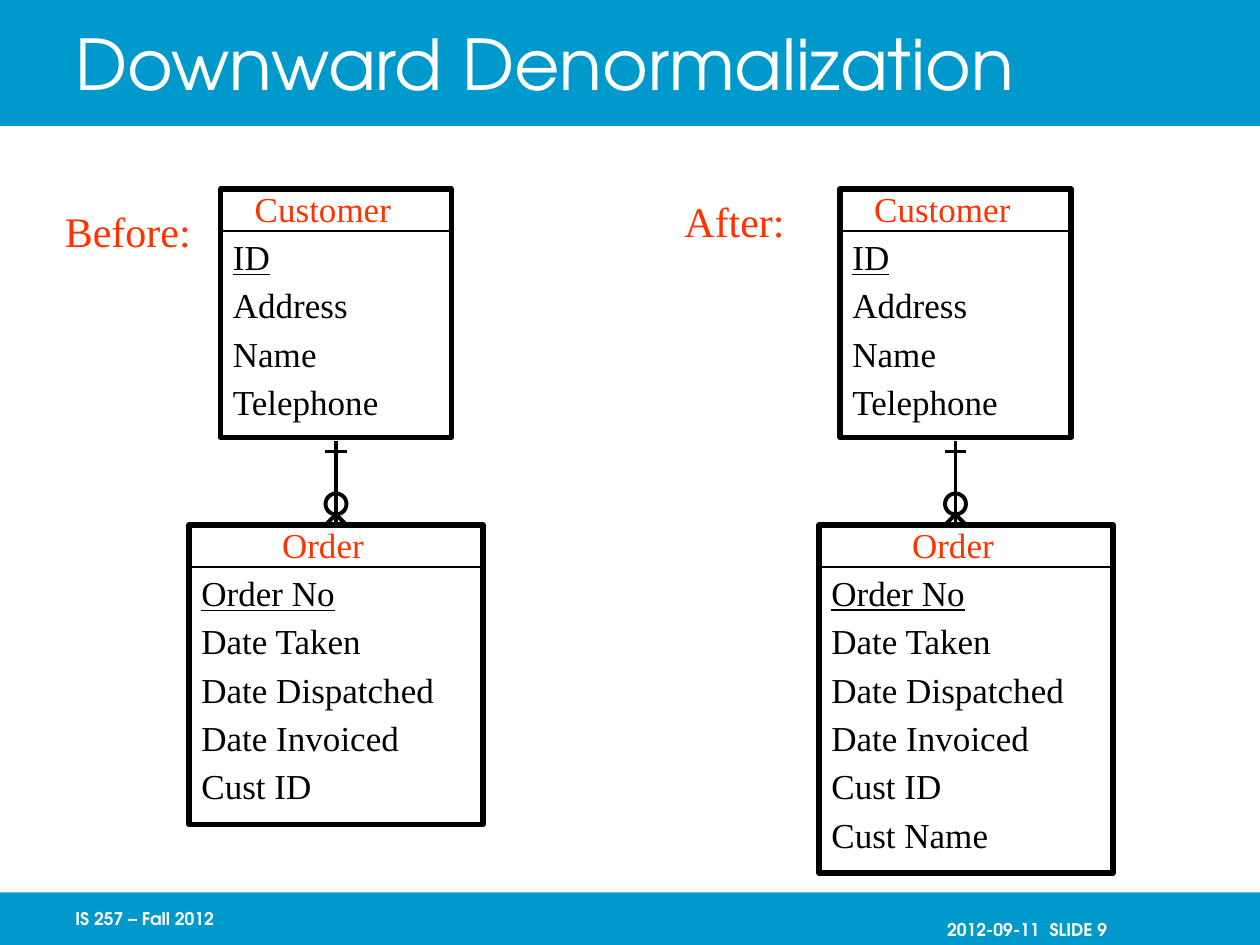
from lxml import etree
from pptx import Presentation
from pptx.dml.color import RGBColor
from pptx.enum.shapes import MSO_CONNECTOR, MSO_SHAPE
from pptx.enum.text import MSO_ANCHOR, PP_ALIGN
from pptx.oxml.ns import qn
from pptx.util import Pt

RECTANGLE, OVAL = MSO_SHAPE.RECTANGLE, MSO_SHAPE.OVAL
STRAIGHT = MSO_CONNECTOR.STRAIGHT
TOP, MIDDLE = MSO_ANCHOR.TOP, MSO_ANCHOR.MIDDLE
LEFT, CENTER, RIGHT = PP_ALIGN.LEFT, PP_ALIGN.CENTER, PP_ALIGN.RIGHT

BLUE = RGBColor(0x00, 0x99, 0xCC)
WHITE = RGBColor(0xFF, 0xFF, 0xFF)
BLACK = RGBColor(0x00, 0x00, 0x00)
RED = RGBColor(0xFF, 0x33, 0x00)

SANS, SERIF = "TeX Gyre Adventor", "Times New Roman"

PAGE_WIDTH, PAGE_HEIGHT = 720, 540
CUSTOMER_TOP, CUSTOMER_WIDTH, CUSTOMER_HEIGHT = 108, 132, 142
ORDER_TOP, ORDER_WIDTH = 300, 168
HEADING_HEIGHT = 24

CUSTOMER_FIELDS = ["ID", "Address", "Name", "Telephone"]
ORDER_FIELDS = ["Order No", "Date Taken", "Date Dispatched", "Date Invoiced", "Cust ID"]


def write(para, text, font=SERIF, size=20, color=BLACK, bold=False,
          underline=False, align=LEFT, spacing=None, before=None):
    """Put text into a paragraph with the given format."""
    para.alignment = align
    if spacing:
        para.line_spacing = spacing
    if before:
        para.space_before = Pt(before)
    span = para.add_run()
    span.text = text
    span.font.name = font
    span.font.size = Pt(size)
    span.font.color.rgb = color
    span.font.bold = bold
    span.font.underline = underline


class Diagram:
    def __init__(self, page):
        self.page = page
        self.shapes = page.shapes

    def start_group(self):
        """Send the elements that follow into a new group."""
        self.shapes = self.page.shapes.add_group_shape().shapes

    def shape(self, kind, left, top, width, height, fill=None, weight=None):
        shape = self.shapes.add_shape(kind, Pt(left), Pt(top), Pt(width), Pt(height))
        shape.shadow.inherit = False
        if fill is None:
            shape.fill.background()
        else:
            shape.fill.solid()
            shape.fill.fore_color.rgb = fill
        if weight is None:
            shape.line.fill.background()
        else:
            shape.line.color.rgb = BLACK
            shape.line.width = Pt(weight)
        return shape

    def line(self, x1, y1, x2, y2, weight=2.25):
        line = self.shapes.add_connector(STRAIGHT, Pt(x1), Pt(y1), Pt(x2), Pt(y2))
        line.line.color.rgb = BLACK
        line.line.width = Pt(weight)
        etree.SubElement(line._element.spPr, qn("a:effectLst"))

    def text(self, text, left, top, width, height, anchor=TOP,
             inset_top=3.6, inset_right=7.2, **style):
        box = self.shapes.add_textbox(Pt(left), Pt(top), Pt(width), Pt(height))
        frame = box.text_frame
        frame.word_wrap = True
        frame.vertical_anchor = anchor
        frame.margin_top = Pt(inset_top)
        frame.margin_right = Pt(inset_right)
        write(frame.paragraphs[0], text, **style)

    def entity(self, name, fields, left, top, width, height):
        """Draw an entity box: heading, rule and fields, the key underlined."""
        frame = self.shape(RECTANGLE, left, top, width, height, weight=3).text_frame
        frame.word_wrap = True
        frame.vertical_anchor = TOP
        frame.margin_top = Pt(5.6)
        heading = frame.paragraphs[0]
        write(heading, name, color=RED, align=CENTER, spacing=0.7)
        heading._p.get_or_add_pPr().set("marR", str(Pt(15)))
        for index, field in enumerate(fields):
            write(frame.add_paragraph(), field, underline=index == 0,
                  spacing=0.7, before=10.8)
        rule = top + HEADING_HEIGHT
        self.line(left, rule, left + width, rule, weight=0.75)

    def relationship(self, x, top, bottom):
        """Draw a one to zero-or-many link with a crow's foot at the bottom."""
        reach = 6
        self.line(x, top, x, bottom)
        for side in (-reach, reach):
            self.line(x, bottom - reach, x + side, bottom)
        self.line(x - reach, top + reach, x + reach, top + reach)
        self.shape(OVAL, x - reach, bottom - 3 * reach, 2 * reach, 2 * reach, weight=2.25)

    def model(self, label, label_left, label_top, customer_left, order_left,
              order_fields, order_height):
        self.start_group()
        self.entity("Customer", CUSTOMER_FIELDS, customer_left, CUSTOMER_TOP,
                    CUSTOMER_WIDTH, CUSTOMER_HEIGHT)
        self.entity("Order", order_fields, order_left, ORDER_TOP,
                    ORDER_WIDTH, order_height)
        self.relationship(customer_left + CUSTOMER_WIDTH / 2, 252, ORDER_TOP)
        self.text(label, label_left, label_top, 90, 36, size=24, color=RED)


def main():
    deck = Presentation()
    deck.slide_width, deck.slide_height = Pt(PAGE_WIDTH), Pt(PAGE_HEIGHT)
    diagram = Diagram(deck.slides.add_slide(deck.slide_layouts[6]))

    diagram.shape(RECTANGLE, 0, 0, PAGE_WIDTH, 72, fill=BLUE)
    diagram.shape(RECTANGLE, 0, 510, PAGE_WIDTH, 30, fill=BLUE)
    footer = dict(top=510, width=150, height=30, anchor=MIDDLE,
                  font=SANS, size=10, color=WHITE, bold=True)
    diagram.text("2012-09-11  SLIDE 9", left=534, align=RIGHT,
                 inset_top=15.6, inset_right=51.4, **footer)
    diagram.text("IS 257 – Fall 2012", left=36, **footer)
    diagram.text("Downward Denormalization", 36, 0, 612, 72, anchor=MIDDLE,
                 font=SANS, size=40, color=WHITE)

    diagram.model("Before:", 30, 114, 126, 108, ORDER_FIELDS, 171)
    diagram.model("After:", 384, 108, 480, 468, ORDER_FIELDS + ["Cust Name"], 199)

    deck.save("out.pptx")


if __name__ == "__main__":
    main()
